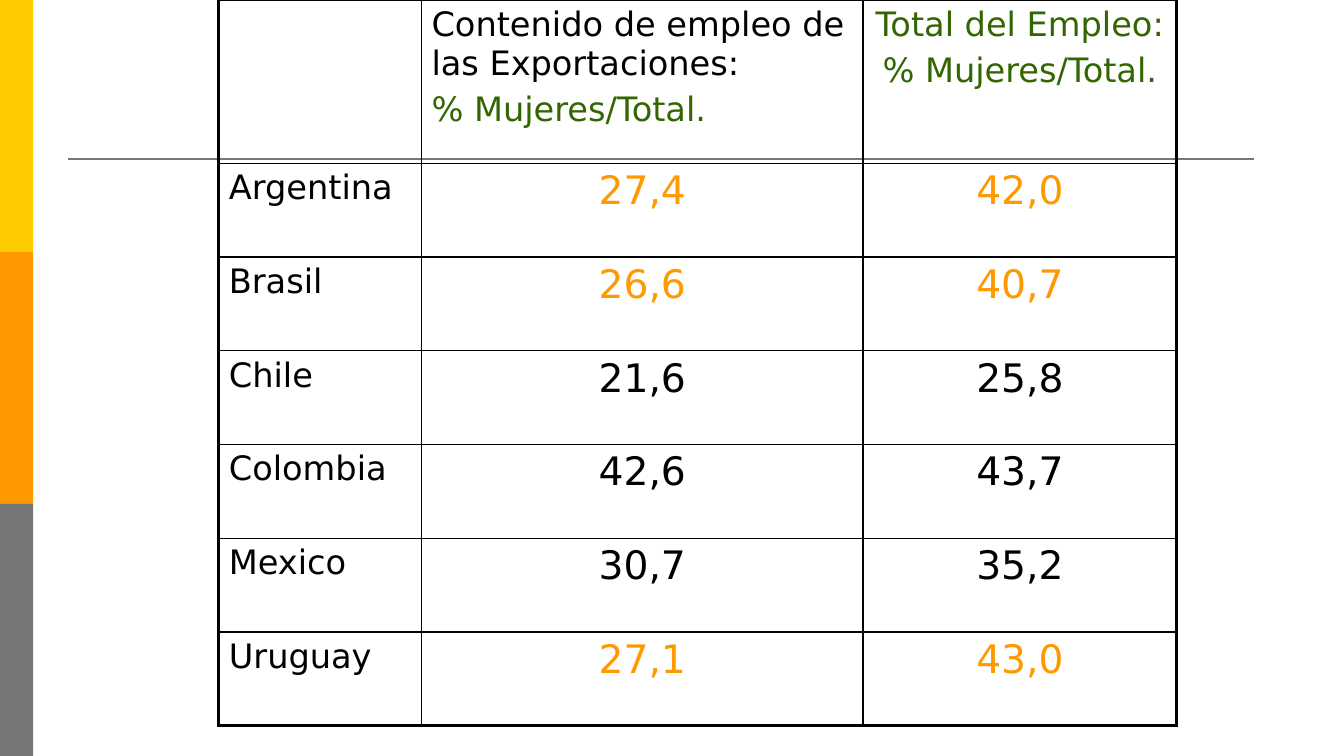
from lxml.etree import SubElement
from pptx import Presentation
from pptx.dml.color import RGBColor
from pptx.enum.shapes import MSO_CONNECTOR as Connector, MSO_SHAPE as Shape
from pptx.enum.text import PP_ALIGN as Align
from pptx.oxml.ns import qn
from pptx.util import Inches, Pt

BLACK, GREEN, ORANGE, YELLOW, GRAY = "000000", "336600", "FF9900", "FFCC00", "777777"
HEADERS = [
    [],
    [("Contenido de empleo de las Exportaciones:", BLACK), ("% Mujeres/Total.", GREEN)],
    [("Total del Empleo:", GREEN), ("% Mujeres/Total.", GREEN)],
]
COUNTRIES = [
    ("Argentina", "27,4", "42,0", ORANGE),
    ("Brasil", "26,6", "40,7", ORANGE),
    ("Chile", "21,6", "25,8", BLACK),
    ("Colombia", "42,6", "43,7", BLACK),
    ("Mexico", "30,7", "35,2", BLACK),
    ("Uruguay", "27,1", "43,0", ORANGE),
]


def color(value):
    return RGBColor.from_string(value)


class SlideBuilder:
    font_name = "DejaVu Sans"
    thin, thick = 1, 2.25

    def __init__(self, deck):
        self.page = deck.slides.add_slide(deck.slide_layouts[6])

    def bar(self, left, top, width, height, fill):
        box = self.page.shapes.add_shape(
            Shape.RECTANGLE, Inches(left), Inches(top), Inches(width), Inches(height))
        box.shadow.inherit = False
        box.fill.solid()
        box.fill.fore_color.rgb = color(fill)
        box.line.fill.background()

    def rule(self, left, right, top, stroke, width):
        line = self.page.shapes.add_connector(
            Connector.STRAIGHT, Inches(left), Inches(top), Inches(right), Inches(top))
        line.line.color.rgb = color(stroke)
        line.line.width = Pt(width)
        SubElement(line._element.spPr, qn("a:effectLst"))

    def table(self, left, top, widths, heights):
        frame = self.page.shapes.add_table(
            len(heights), len(widths), Inches(left), Inches(top),
            Inches(sum(widths)), Inches(sum(heights)))
        grid = frame.table
        grid.first_row = grid.horz_banding = False
        for column, width in zip(grid.columns, widths):
            column.width = Inches(width)
        for row, height in zip(grid.rows, heights):
            row.height = Inches(height)
        last_row, last_column = len(heights) - 1, len(widths) - 1
        for row in range(len(heights)):
            for column in range(len(widths)):
                cell = grid.cell(row, column)
                outer = {"L": column == 0, "R": column == last_column,
                         "T": row == 0, "B": row == last_row}
                self.borders(cell, outer)
                cell.fill.background()
        return grid

    def borders(self, cell, outer):
        properties = cell._tc.get_or_add_tcPr()
        for side, is_outer in outer.items():
            width = self.thick if is_outer else self.thin
            edge = SubElement(properties, qn(f"a:ln{side}"), w=str(Pt(width)))
            fill = SubElement(edge, qn("a:solidFill"))
            SubElement(fill, qn("a:srgbClr"), val=BLACK)

    def cell_text(self, cell, lines, size, align=Align.LEFT):
        frame = cell.text_frame
        for index, (text, ink) in enumerate(lines):
            para = frame.add_paragraph() if index else frame.paragraphs[0]
            para.text = text
            para.alignment = align
            para.space_before = Pt(5 if index else 0)
            para.font.name = self.font_name
            para.font.size = Pt(size)
            para.font.color.rgb = color(ink)


def main():
    deck = Presentation()
    deck.slide_width, deck.slide_height = Inches(13.33), Inches(7.5)
    slide = SlideBuilder(deck)

    for index, fill in enumerate([YELLOW, ORANGE, GRAY]):
        slide.bar(0, index * 2.5, 0.33, 2.5, fill)
    slide.rule(0.67, 12.44, 1.58, GRAY, 1.5)

    grid = slide.table(2.17, 0, [2.01, 4.38, 3.11], [1.62] + [0.93] * len(COUNTRIES))
    for column, lines in enumerate(HEADERS):
        slide.cell_text(grid.cell(0, column), lines, 24,
                        Align.CENTER if column == 2 else Align.LEFT)
    for row, (country, exports, total, ink) in enumerate(COUNTRIES, 1):
        slide.cell_text(grid.cell(row, 0), [(country, BLACK)], 24)
        for column, value in enumerate([exports, total], 1):
            slide.cell_text(grid.cell(row, column), [(value, ink)], 28, Align.CENTER)

    deck.save("out.pptx")


if __name__ == "__main__":
    main()
